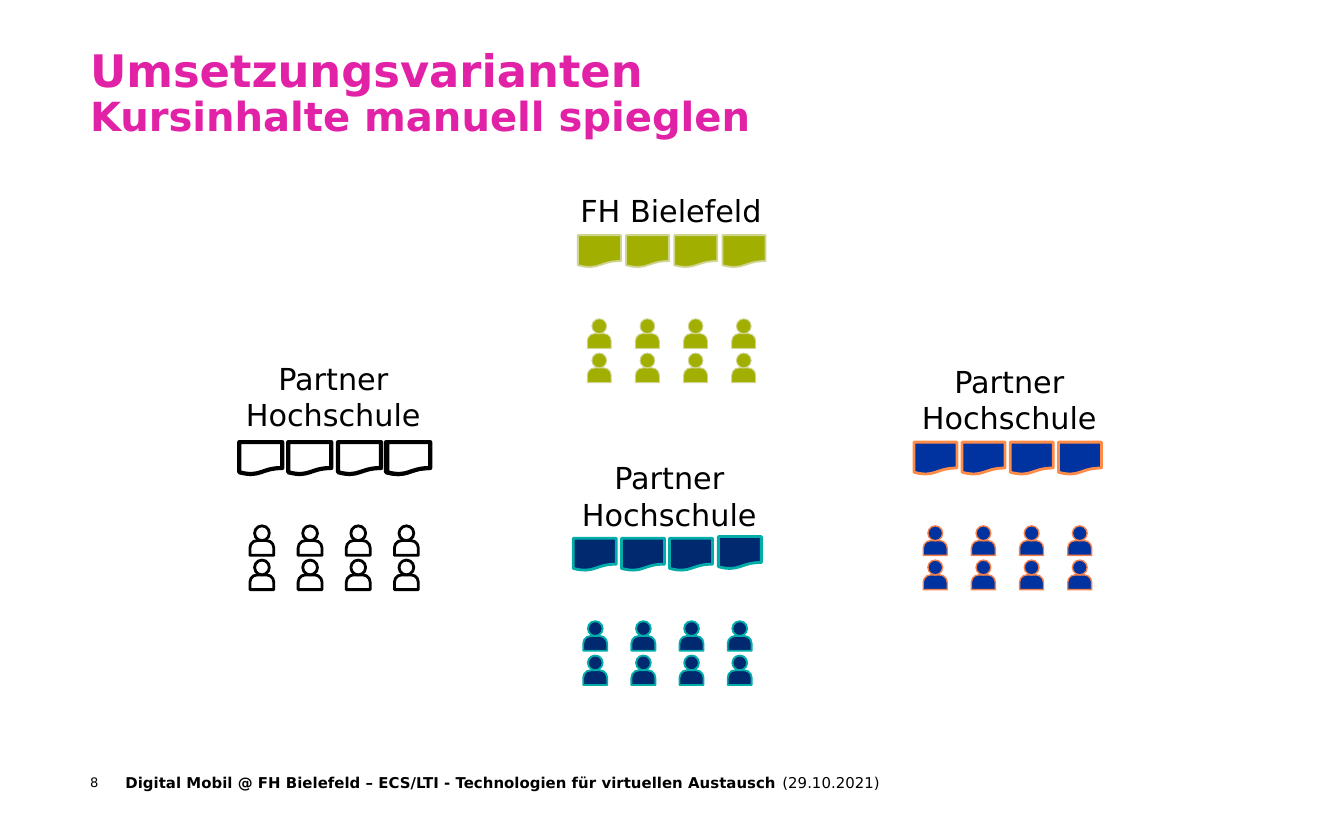
from dataclasses import dataclass
from itertools import product

from pptx import Presentation
from pptx.dml.color import RGBColor
from pptx.enum.shapes import MSO_SHAPE
from pptx.enum.text import MSO_ANCHOR, MSO_AUTO_SIZE, PP_ALIGN
from pptx.util import Pt

SHEET = MSO_SHAPE.FLOWCHART_DOCUMENT
BODY = MSO_SHAPE.ROUND_2_SAME_RECTANGLE
HEAD = MSO_SHAPE.OVAL
LEFT, CENTER = PP_ALIGN.LEFT, PP_ALIGN.CENTER
TOP = MSO_ANCHOR.TOP
FIXED = MSO_AUTO_SIZE.NONE


@dataclass(frozen=True)
class Theme:
    font: str = "DejaVu Sans"
    ink: str = "000000"
    title: str = "E122A7"
    white: str = "FFFFFF"
    green: str = "A1B000"
    lime: str = "CFD491"
    blue: str = "0033A0"
    orange: str = "FF8B47"
    coral: str = "F6814A"
    navy: str = "012970"
    teal: str = "00ADA9"
    head: float = 24
    sub: float = 21.5
    label: float = 16.2
    foot: float = 8
    page: float = 7


@dataclass(frozen=True)
class Box:
    left: float
    top: float
    width: float
    height: float

    def lengths(self) -> tuple:
        return Pt(self.left), Pt(self.top), Pt(self.width), Pt(self.height)


@dataclass(frozen=True)
class Paint:
    fill: str
    line: str
    width: float


@dataclass(frozen=True)
class Run:
    text: str
    size: float
    bold: bool = False


@dataclass(frozen=True)
class School:
    """One university: its label, its course sheets and its people."""
    name: tuple[str, ...]
    label: Box
    sheets: tuple[tuple[float, float], ...]
    sheet: Paint
    crowd: tuple[float, float]
    person: Paint
    align: PP_ALIGN = CENTER


T = Theme()
PARTNER = ("Partner", "Hochschule")
SHEET_W, SHEET_H = 23.04, 17.28
STEP_X, STEP_Y = 25.8, 18.36
BODY_W, HEAD_W = 12.8, 7.9
COLS, ROWS = 4, 2


def row(left: float, top: float) -> tuple[tuple[float, float], ...]:
    return tuple((left + i * STEP_X, top) for i in range(COLS))


SCHOOLS = (
    School(("FH Bielefeld",), Box(303.84, 99.36, 112.32, 26.64),
           row(309.6, 126), Paint(T.green, T.lime, 1),
           (314.64, 170.8), Paint(T.green, T.lime, 0.5), LEFT),
    School(PARTNER, Box(124.56, 189.36, 108, 46.8),
           ((128.16, 236.88), (154.4, 236.88), (181.1, 236.88),
            (206.8, 236.88), (207.4, 236.88)),
           Paint(T.white, T.ink, 2.25),
           (133.92, 281.7), Paint(T.white, T.ink, 1.5)),
    School(PARTNER, Box(486.72, 190.8, 108, 46.8),
           row(489.6, 236.88), Paint(T.blue, T.orange, 1.5),
           (494.64, 281.7), Paint(T.blue, T.coral, 0.75)),
    School(PARTNER, Box(304.56, 242.64, 108, 46.8),
           row(307.1, 288.4)[:-1] + ((384.84, 287.5),),
           Paint(T.navy, T.teal, 1.5),
           (312.48, 332.8), Paint(T.navy, T.teal, 1)),
)


def write(frame, lines: list[list[Run]], *, color: str = T.ink,
          align: PP_ALIGN = LEFT, space: float = 1.0, wrap: bool = True,
          inset: bool = False) -> None:
    frame.auto_size = FIXED
    frame.word_wrap = wrap
    frame.vertical_anchor = TOP
    side, edge = (7.2, 3.6) if inset else (0, 0)
    frame.margin_left = frame.margin_right = Pt(side)
    frame.margin_top = frame.margin_bottom = Pt(edge)
    for i, line in enumerate(lines):
        para = frame.add_paragraph() if i else frame.paragraphs[0]
        para.alignment = align
        para.line_spacing = space
        for part in line:
            run = para.add_run()
            run.text = part.text
            font = run.font
            font.name, font.size, font.bold = T.font, Pt(part.size), part.bold
            font.color.rgb = RGBColor.from_string(color)


def draw(shapes, kind: MSO_SHAPE, box: Box, paint: Paint):
    shape = shapes.add_shape(kind, *box.lengths())
    shape.shadow.inherit = False
    shape.fill.solid()
    shape.fill.fore_color.rgb = RGBColor.from_string(paint.fill)
    shape.line.color.rgb = RGBColor.from_string(paint.line)
    shape.line.width = Pt(paint.width)
    return shape


def add_person(shapes, left: float, top: float, paint: Paint) -> None:
    group = shapes.add_group_shape().shapes
    body = draw(group, BODY, Box(left, top + HEAD_W, BODY_W, HEAD_W), paint)
    body.adjustments[0], body.adjustments[1] = 0.5, 0
    inset = (BODY_W - HEAD_W) / 2
    draw(group, HEAD, Box(left + inset, top, HEAD_W, HEAD_W), paint)


def add_school(shapes, school: School) -> None:
    for left, top in school.sheets:
        draw(shapes, SHEET, Box(left, top, SHEET_W, SHEET_H), school.sheet)
    left, top = school.crowd
    for col, line in product(range(COLS), range(ROWS)):
        add_person(shapes, left + col * STEP_X, top + line * STEP_Y,
                   school.person)
    label = shapes.add_textbox(*school.label.lengths())
    write(label.text_frame, [[Run(text, T.label)] for text in school.name],
          align=school.align, wrap=False, inset=True)


def main() -> None:
    deck = Presentation()
    deck.slide_width, deck.slide_height = Pt(720), Pt(450)
    shapes = deck.slides.add_slide(deck.slide_layouts[5]).shapes

    title = shapes.title
    title.left, title.top, title.width, title.height = Box(
        48.24, 25.92, 645.12, 62.64).lengths()
    write(title.text_frame,
          [[Run("Umsetzungsvarianten", T.head, True)],
           [Run("Kursinhalte manuell spieglen", T.sub, True)]],
          color=T.title, space=0.9)

    for school in SCHOOLS:
        add_school(shapes, school)

    page = shapes.add_textbox(*Box(48.24, 414.72, 18, 8.64).lengths())
    write(page.text_frame, [[Run("8", T.page)]])
    foot = shapes.add_textbox(*Box(67.2, 414.72, 412.56, 9.36).lengths())
    write(foot.text_frame, [[
        Run("Digital Mobil @ FH Bielefeld – ECS/LTI - Technologien für "
            "virtuellen Austausch ", T.foot, True),
        Run("(29.10.2021)", T.foot)]])

    deck.save("out.pptx")


if __name__ == "__main__":
    main()
